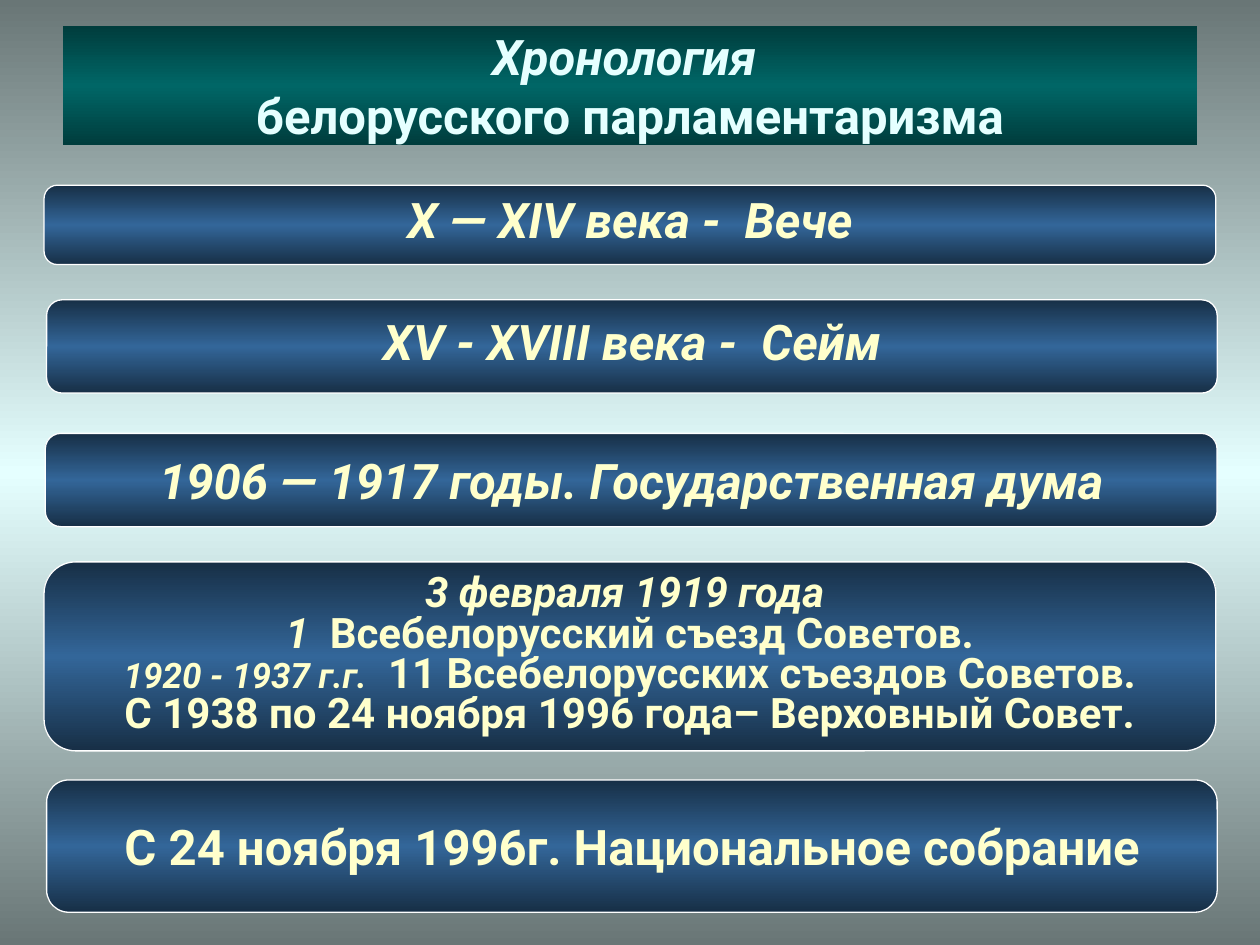
"""Build the slide on the chronology of Belarusian parliamentarism."""
from copy import deepcopy
from dataclasses import dataclass

from lxml import etree
from pptx import Presentation
from pptx import util as u
from pptx.dml.color import RGBColor
from pptx.enum import shapes, text
from pptx.oxml import ns


@dataclass(frozen=True)
class Theme:
    font: str = "Roboto"
    back: str = "E5FFFF"
    head: str = "006666"
    bar: str = "336699"
    edge: str = "FFFFFF"
    ink: str = "FFFFCC"
    big: int = 28
    mid: int = 24
    low: int = 20
    dark: int = 46275
    dim: int = 60000


def rgb(code):
    return RGBColor.from_string(code)


def put(para, words, size, color, font, italic=True):
    run = para.add_run()
    run.text = words
    face = run.font
    face.name, face.size = font, u.Pt(size)
    face.bold, face.italic = True, italic
    face.color.rgb = rgb(color)


def blend(fill, node, base, shade):
    """Fill from a shaded edge to the base colour in the middle and back."""
    fill.gradient()
    fill.gradient_angle = 270
    for stop in fill.gradient_stops:
        stop.color.rgb = rgb(base)
    stops = next(node.iter(ns.qn("a:gsLst")))
    first, last = list(stops)
    mid = deepcopy(first)
    first.addnext(mid)
    for stop, pos in zip((first, mid, last), (0, 50000, 100000)):
        stop.set("pos", str(pos))
    for stop in (first, last):
        color = stop[0]
        etree.SubElement(color, ns.qn("a:gamma"))
        etree.SubElement(color, ns.qn("a:shade")).set("val", str(shade))
        etree.SubElement(color, ns.qn("a:invGamma"))


class Deck:
    """Hold the theme and the current slide on a 1000 by 750 grid."""

    def __init__(self, theme):
        self.theme = theme
        self.show = Presentation()
        self.show.slide_width, self.show.slide_height = u.Inches(10), u.Inches(7.5)
        self.slide = self.show.slides.add_slide(self.show.slide_layouts[5])
        blend(self.slide.background.fill, self.slide.element, theme.back, theme.dark)

    def box(self, col, row, cols, rows):
        wide = self.show.slide_width / 1000
        high = self.show.slide_height / 750
        return [u.Emu(round(n)) for n in (col * wide, row * high, cols * wide, rows * high)]

    def title(self, lines, *area):
        look, item = self.theme, self.slide.shapes.title
        item.left, item.top, item.width, item.height = self.box(*area)
        blend(item.fill, item.element, look.head, look.dim)
        frame = item.text_frame
        frame.auto_size = text.MSO_AUTO_SIZE.NONE
        frame.vertical_anchor = text.MSO_ANCHOR.MIDDLE
        para = frame.paragraphs[0]
        para.alignment = text.PP_ALIGN.CENTER
        for at, (words, italic) in enumerate(lines):
            if at:
                para.add_line_break()
            put(para, words, look.big, look.back, look.font, italic)

    def bar(self, lines, *area, pitch=1.0, lead=0):
        look = self.theme
        item = self.slide.shapes.add_shape(
            shapes.MSO_SHAPE.ROUNDED_RECTANGLE, *self.box(*area))
        item.adjustments[0] = 0.167
        item.shadow.inherit = False
        blend(item.fill, item.element, look.bar, look.dark)
        item.line.color.rgb = rgb(look.edge)
        item.line.width = u.Pt(0.75)
        frame = item.text_frame
        frame.word_wrap = False
        frame.vertical_anchor = text.MSO_ANCHOR.MIDDLE
        for at, runs in enumerate(lines):
            para = frame.add_paragraph() if at else frame.paragraphs[0]
            para.alignment = text.PP_ALIGN.CENTER
            para.line_spacing = pitch
            para.space_before = u.Pt(lead)
            for words, size, italic in runs:
                put(para, words, size, look.ink, look.font, italic)


def main():
    look = Theme()
    big, mid, low = look.big, look.mid, look.low
    deck = Deck(look)
    deck.title([("Хронология ", True), ("белорусского парламентаризма", False)],
               50, 21, 900, 94)
    tight = {"pitch": 0.8, "lead": 5.6}
    deck.bar([[("X — XIV века -  Вече", big, True)]], 35, 147, 930, 63, **tight)
    deck.bar([[("XV - XVIII века -  Сейм", big, True)]], 37, 238, 929, 74, **tight)
    deck.bar([[("1906 — 1917 годы. Государственная дума", big, True)]],
             36, 344, 930, 74)
    deck.bar([
        [("3 февраля 1919 года ", mid, True)],
        [("1 ", mid, True), (" Всебелорусский съезд Советов.", mid, False)],
        [("1920 - 1937 г.г.", low, True), (" ", mid, True),
         (" 11 Всебелорусских съездов Советов.", mid, False)],
        [("С 1938 по 24 ноября 1996 года– Верховный Совет.", mid, False)],
    ], 35, 446, 930, 150, pitch=0.8)
    deck.bar([[("С 24 ноября 1996г. Национальное собрание", big, False)]],
             37, 619, 929, 105)
    deck.show.save("out.pptx")


if __name__ == "__main__":
    main()
